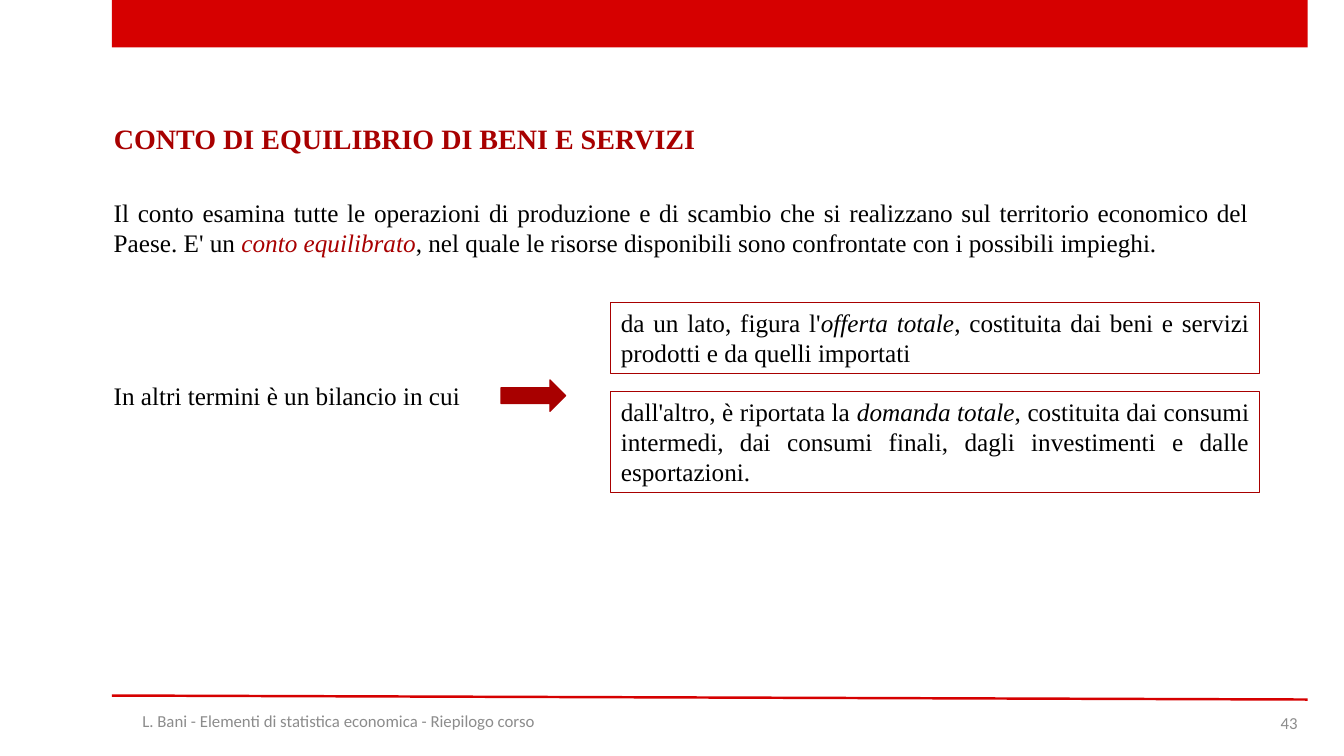
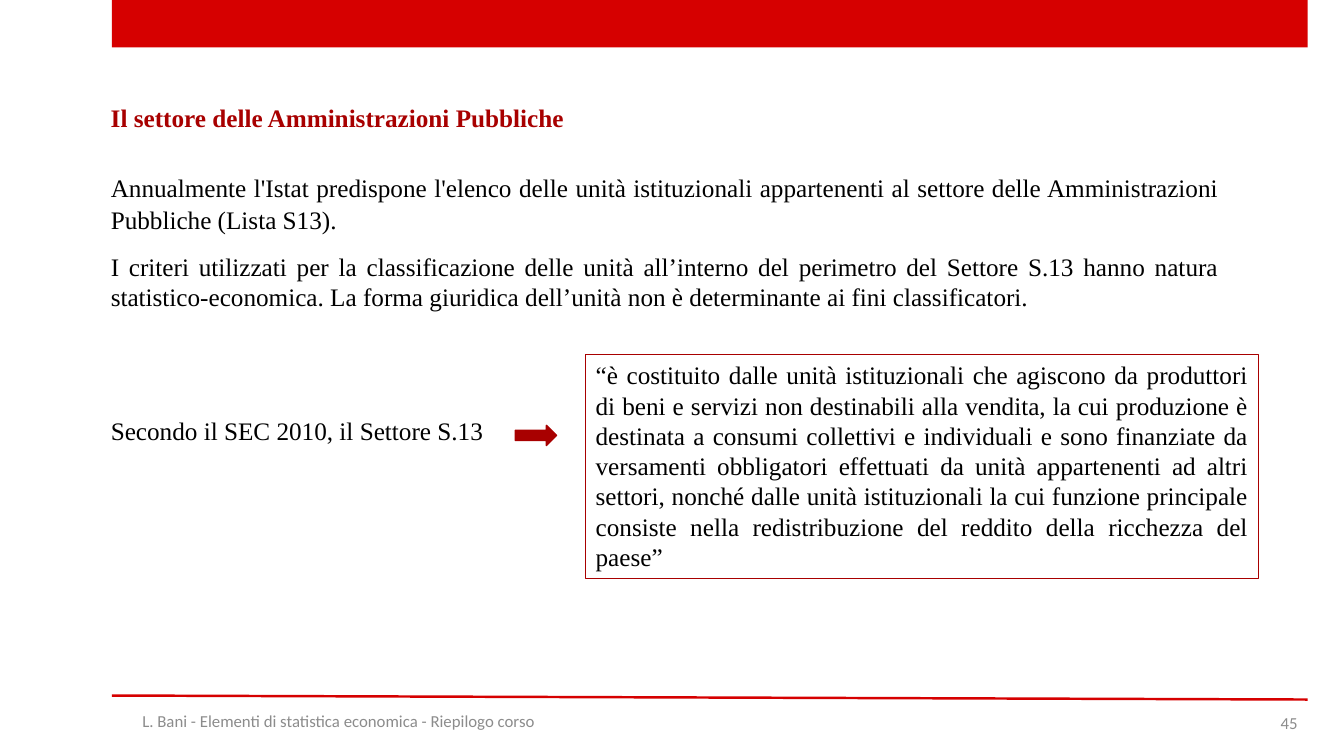
from dataclasses import dataclass
from typing import NamedTuple

from lxml.etree import SubElement
from pptx import Presentation
from pptx.dml.color import RGBColor
from pptx.enum.shapes import MSO_CONNECTOR, MSO_SHAPE
from pptx.enum.text import MSO_ANCHOR, MSO_AUTO_SIZE, PP_ALIGN
from pptx.oxml.ns import qn
from pptx.util import Inches, Pt


@dataclass(frozen=True)
class Theme:
    band: RGBColor = RGBColor(0xD6, 0x00, 0x00)
    accent: RGBColor = RGBColor(0xA8, 0x00, 0x00)
    ink: RGBColor = RGBColor(0x00, 0x00, 0x00)
    muted: RGBColor = RGBColor(0x8C, 0x8C, 0x8C)
    body_font: str = "Times New Roman"
    footer_font: str = "Calibri"
    title_size: int = 20
    body_size: int = 18
    footer_size: int = 12


class Box(NamedTuple):
    left: float
    top: float
    width: float
    height: float

    def inside(self, left, top, width, height):
        return Box(self.left + left, self.top + top, width, height)

    def emu(self):
        return [Inches(length) for length in self]


THEME = Theme()
SLIDE = Box(0, 0, 13.33, 7.5)
FRAME = SLIDE.inside(1.11, 0, 11.86, SLIDE.height)
COURSE = "L. Bani - Elementi di statistica economica - Riepilogo corso"
BODY = dict(name=THEME.body_font, size=Pt(THEME.body_size), color=THEME.ink)
FOOTER = dict(name=THEME.footer_font, size=Pt(THEME.footer_size), color=THEME.muted)
HEADING = BODY | dict(color=THEME.accent, bold=True)
TERM = dict(italic=True)
KEY_TERM = dict(italic=True, color=THEME.accent)
JUSTIFIED = dict(alignment=PP_ALIGN.JUSTIFY)


def style_font(font, values):
    for key, value in values.items():
        if key == "color":
            font.color.rgb = value
        else:
            setattr(font, key, value)


def write(slide, box, runs, font=BODY, layout=None, wrap=True, anchor=MSO_ANCHOR.TOP):
    """Adds one paragraph; each run is a string or a (string, font changes) pair."""
    holder = slide.shapes.add_textbox(*box.emu())
    frame = holder.text_frame
    frame.auto_size = MSO_AUTO_SIZE.NONE
    frame.word_wrap = wrap
    frame.vertical_anchor = anchor
    paragraph = frame.paragraphs[0]
    for key, value in (layout or {}).items():
        setattr(paragraph, key, value)
    for part in runs:
        text, changes = (part, {}) if isinstance(part, str) else part
        run = paragraph.add_run()
        run.text = text
        style_font(run.font, font | changes)
    return holder


def draw_solid(slide, preset, box, color, line_width=None):
    solid = slide.shapes.add_shape(preset, *box.emu())
    solid.shadow.inherit = False
    solid.fill.solid()
    solid.fill.fore_color.rgb = color
    if line_width is None:
        solid.line.fill.background()
    else:
        solid.line.color.rgb = color
        solid.line.width = Pt(line_width)


def draw_frame(slide, box, number):
    """Top band, footer rule, course name and slide number."""
    draw_solid(slide, MSO_SHAPE.RECTANGLE, box.inside(0, 0, box.width, 0.47), THEME.band)
    start = box.inside(0, 6.9, 0, 0)
    end = box.inside(box.width, 6.94, 0, 0)
    rule = slide.shapes.add_connector(
        MSO_CONNECTOR.STRAIGHT, *start.emu()[:2], *end.emu()[:2])
    rule.line.color.rgb = THEME.band
    rule.line.width = Pt(1.75)
    SubElement(rule._element.spPr, qn("a:effectLst"))
    for area, text, align in (
        (box.inside(0, 6.95, 4.5, 0.4), COURSE, PP_ALIGN.CENTER),
        (box.inside(box.width - 3, 6.97, 3, 0.4), str(number), PP_ALIGN.RIGHT),
    ):
        write(slide, area, [text], FOOTER, dict(alignment=align), anchor=MSO_ANCHOR.MIDDLE)


def draw_branch(slide, box, lead, lead_area, arrow_area, outcomes_left, outcomes, gap=0.17):
    """A lead phrase, an arrow and a stack of outlined outcomes, all within box."""
    write(slide, box.inside(*lead_area), [lead])
    top = 0
    for height, runs in outcomes:
        area = box.inside(outcomes_left, top, box.width - outcomes_left, height)
        outcome = write(slide, area, runs, layout=JUSTIFIED)
        outcome.line.color.rgb = THEME.accent
        outcome.line.width = Pt(0.75)
        top += height + gap
    draw_solid(slide, MSO_SHAPE.RIGHT_ARROW, box.inside(*arrow_area), THEME.accent, 1)


def balance_account(slide):
    body = SLIDE.inside(1.03, 1.16, 11.46, 3.73)
    write(slide, body.inside(0, 0, 6.02, 0.44), ["CONTO DI EQUILIBRIO DI BENI E SERVIZI"],
          HEADING | dict(size=Pt(THEME.title_size)), wrap=False)
    write(slide, body.inside(0, 0.75, body.width, 0.71), [
        "Il conto esamina tutte le operazioni di produzione e di scambio che si realizzano "
        "sul territorio economico del Paese. E' un ",
        ("conto equilibrato", KEY_TERM),
        ", nel quale le risorse disponibili sono confrontate con i possibili impieghi.",
    ], layout=JUSTIFIED)
    supply = [
        "da un lato, figura l'", ("offerta totale", TERM),
        ", costituita dai beni e servizi prodotti e da quelli importati",
    ]
    demand = [
        "dall'altro, è riportata la ", ("domanda totale", TERM),
        ", costituita dai consumi intermedi, dai consumi finali, dagli investimenti "
        "e dalle esportazioni.",
    ]
    draw_branch(
        slide, body.inside(0, 1.84, body.width, 1.89),
        lead="In altri termini è un bilancio in cui",
        lead_area=(0, 0.72, 3.8, 0.4),
        arrow_area=(3.94, 0.77, 0.64, 0.31),
        outcomes_left=5.03,
        outcomes=[(0.71, supply), (1.01, demand)])


def public_sector(slide):
    body = SLIDE.inside(1, 0.99, 11.48, 4.75)
    text_width = 11.19
    write(slide, body.inside(0, 0, 4.74, 0.38),
          ["Il settore delle Amministrazioni Pubbliche"], HEADING,
          dict(line_spacing=Pt(19.5)), wrap=False)
    write(slide, body.inside(0, 0.65, text_width, 0.75), [
        "Annualmente l'Istat predispone l'elenco delle unità istituzionali appartenenti "
        "al settore delle Amministrazioni Pubbliche (Lista S13).",
    ], layout=JUSTIFIED | dict(line_spacing=1.07))
    write(slide, body.inside(0, 1.45, text_width, 0.71), [
        "I criteri utilizzati per la classificazione delle unità all’interno del perimetro "
        "del Settore S.13 hanno natura statistico-economica. La forma giuridica dell’unità "
        "non è determinante ai fini classificatori.",
    ], layout=JUSTIFIED)
    definition = [
        "“è costituito dalle unità istituzionali che agiscono da produttori di beni e servizi "
        "non destinabili alla vendita, la cui produzione è destinata a consumi collettivi e "
        "individuali e sono finanziate da versamenti obbligatori effettuati da unità "
        "appartenenti ad altri settori, nonché dalle unità istituzionali la cui funzione "
        "principale consiste nella redistribuzione del reddito della ricchezza del paese”",
    ]
    draw_branch(
        slide, body.inside(0, 2.53, body.width, 2.22),
        lead="Secondo il SEC 2010, il Settore S.13",
        lead_area=(0, 0.55, 4.05, 0.4),
        arrow_area=(4.11, 0.7, 0.41, 0.2),
        outcomes_left=4.81,
        outcomes=[(2.22, definition)])


def main():
    deck = Presentation()
    deck.slide_width, deck.slide_height = SLIDE.emu()[2:]
    blank = deck.slide_layouts[6]
    for number, fill_slide in ((43, balance_account), (45, public_sector)):
        slide = deck.slides.add_slide(blank)
        draw_frame(slide, FRAME, number)
        fill_slide(slide)
    deck.save("out.pptx")


if __name__ == "__main__":
    main()
